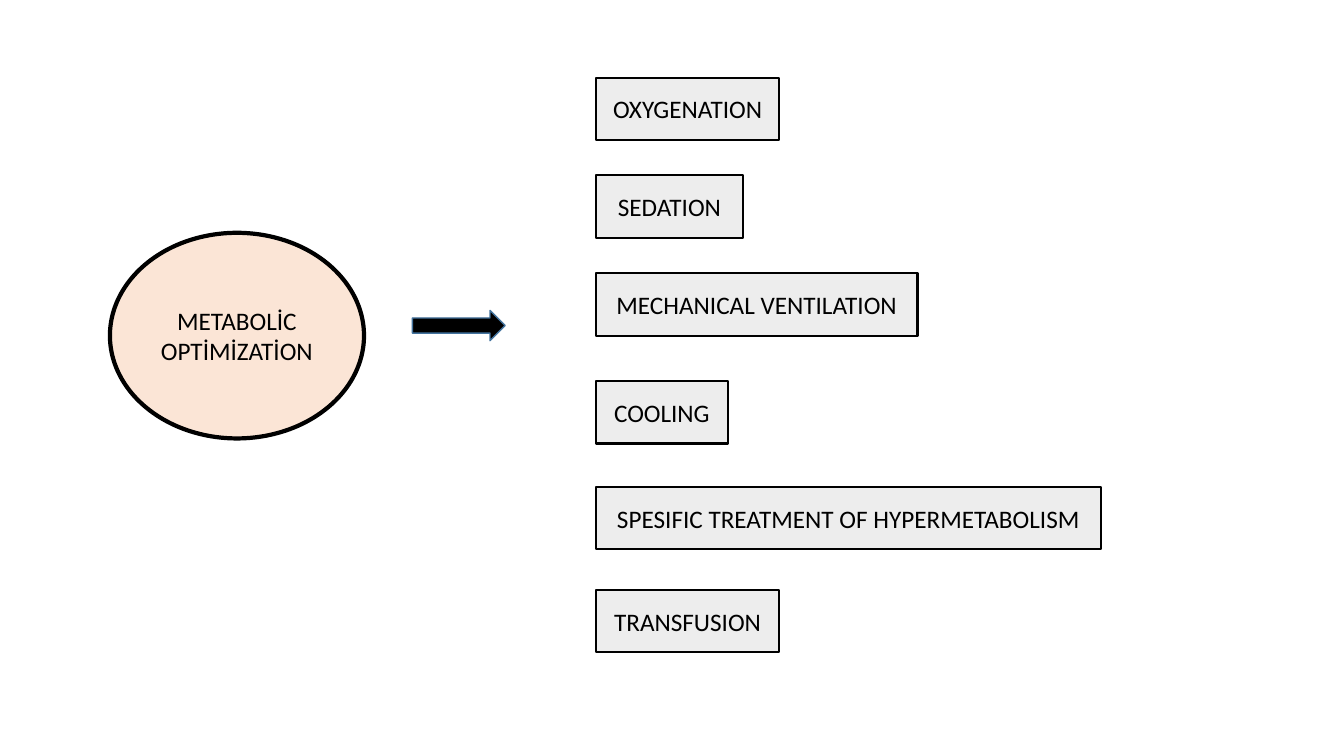
from dataclasses import dataclass

from pptx import Presentation
from pptx.dml.color import RGBColor
from pptx.enum.shapes import MSO_SHAPE as Kind
from pptx.enum.text import MSO_ANCHOR as Anchor, PP_ALIGN as Align
from pptx.slide import Slide
from pptx.util import Emu, Pt

PX = 9144  # EMU per px, 100 px to the inch
FONT = "Calibri"
COLORS = {
    "black": "000000",
    "peach": "FBE5D6",
    "gray": "EDEDED",
    "blue": "43739E",
}
BOX_LEFT, BOX_HIGH = 591, 62


@dataclass
class Node:
    left: int
    top: int
    width: int
    height: int
    fill: str
    text: str = ""
    kind: Kind = Kind.RECTANGLE
    line: str = "black"
    weight: float = 1.5


@dataclass
class Step:
    text: str
    top: int
    width: int


STEPS = [
    Step("OXYGENATION", 77, 182),
    Step("SEDATION", 174, 146),
    Step("MECHANICAL VENTILATION", 271, 319),
    Step("COOLING", 378, 131),
    Step("SPESIFIC TREATMENT OF HYPERMETABOLISM", 483, 501),
    Step("TRANSFUSION", 585, 182),
]


def px(size: int) -> Emu:
    return Emu(size * PX)


def color(name: str) -> RGBColor:
    return RGBColor.from_string(COLORS[name])


def draw(slide: Slide, node: Node) -> None:
    shape = slide.shapes.add_shape(
        node.kind, px(node.left), px(node.top), px(node.width), px(node.height)
    )
    shape.shadow.inherit = False
    shape.fill.solid()
    shape.fill.fore_color.rgb = color(node.fill)
    shape.line.color.rgb = color(node.line)
    shape.line.width = Pt(node.weight)
    if not node.text:
        return
    frame = shape.text_frame
    frame.word_wrap = True
    frame.vertical_anchor = Anchor.MIDDLE
    frame.text = node.text
    for para in frame.paragraphs:
        para.alignment = Align.CENTER
        for run in para.runs:
            run.font.name = FONT
            run.font.size = Pt(18)
            run.font.color.rgb = color("black")


def main() -> None:
    deck = Presentation()
    deck.slide_width, deck.slide_height = px(1333), px(750)
    slide = deck.slides.add_slide(deck.slide_layouts[6])

    # Goal and arrow
    draw(slide, Node(109, 231, 252, 204, "peach", "METABOLİC\nOPTİMİZATİON",
                     Kind.OVAL, weight=3))
    draw(slide, Node(409, 308, 92, 30, "black", kind=Kind.RIGHT_ARROW,
                     line="blue", weight=1))

    # Treatment steps
    for step in STEPS:
        draw(slide, Node(BOX_LEFT, step.top, step.width, BOX_HIGH, "gray", step.text))

    deck.save("out.pptx")


if __name__ == "__main__":
    main()
